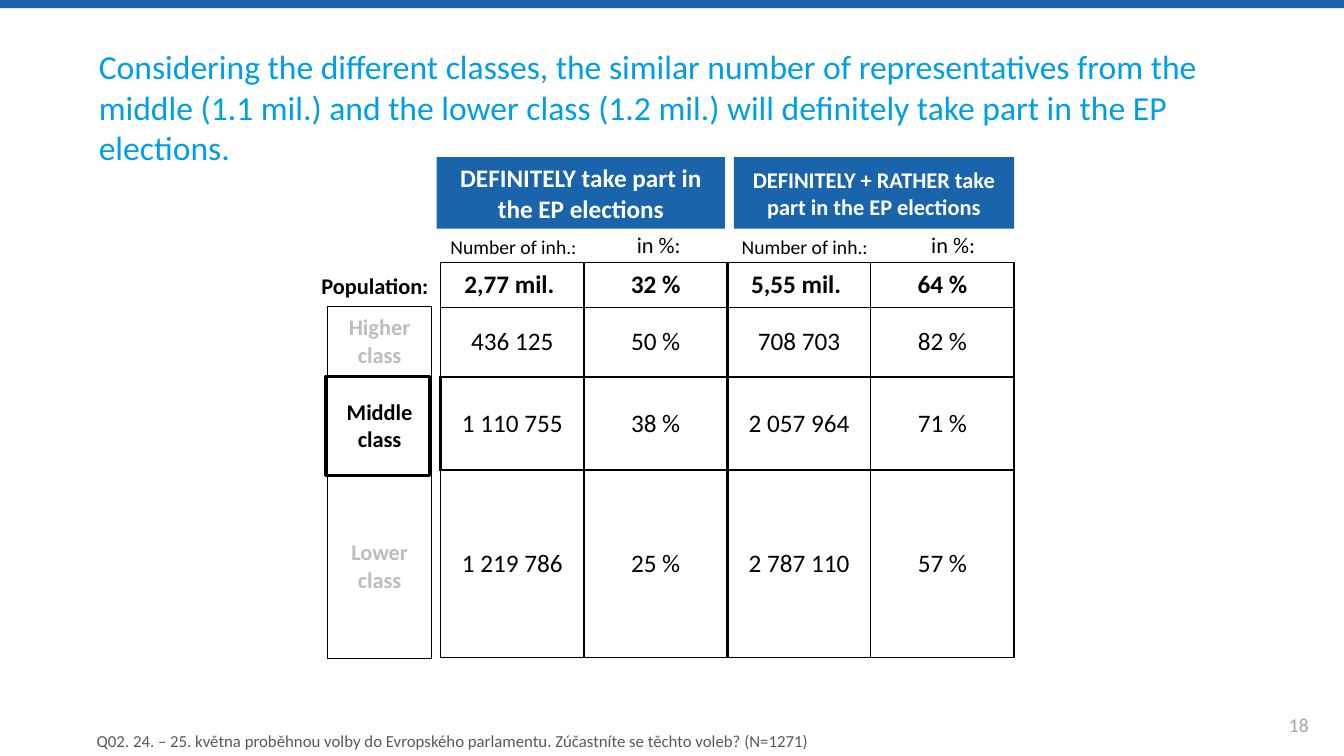
from lxml import etree
from pptx import Presentation, util as u
from pptx.dml.color import RGBColor
from pptx.enum import shapes, text
from pptx.oxml.ns import qn

BLUE = RGBColor(0x19, 0x64, 0xAA)
SKY = RGBColor(0x00, 0x9F, 0xE3)
WHITE = RGBColor(0xFF, 0xFF, 0xFF)
BLACK = RGBColor(0x00, 0x00, 0x00)
FOOTNOTE = RGBColor(0x59, 0x59, 0x59)
PAGE = RGBColor(0xA6, 0xA6, 0xA6)
MUTED = RGBColor(0xBD, 0xBD, 0xBD)

CENTER, LEFT = text.PP_ALIGN.CENTER, text.PP_ALIGN.LEFT
MIDDLE, TOP = text.MSO_ANCHOR.MIDDLE, text.MSO_ANCHOR.TOP


class Deck:
    """Draws on one slide; all lengths are percentages of its width or height."""
    font = "Calibri"

    def __init__(self):
        self.prs = Presentation()
        self.prs.slide_width, self.prs.slide_height = u.Inches(13.333), u.Inches(7.5)
        self.s = self.prs.slides.add_slide(self.prs.slide_layouts[5])

    def x(self, share):
        return round(self.prs.slide_width * share / 100)

    def y(self, share):
        return round(self.prs.slide_height * share / 100)

    def box(self, left, top, width, height):
        return self.x(left), self.y(top), self.x(width), self.y(height)

    def set_text(self, tf, words, size, color, bold=False, align=LEFT):
        tf.text = words
        p = tf.paragraphs[0]
        p.alignment = align
        p.font.name, p.font.size, p.font.bold = self.font, u.Pt(size), bold
        p.font.color.rgb = color

    def title(self, words, box, indent):
        sp = self.s.shapes.title
        sp.left, sp.top, sp.width, sp.height = self.box(*box)
        tf = sp.text_frame
        tf.auto_size, tf.vertical_anchor = text.MSO_AUTO_SIZE.NONE, TOP
        tf.margin_left = self.x(indent)
        tf.margin_top = tf.margin_right = tf.margin_bottom = 0
        self.set_text(tf, words, 24, SKY)

    def label(self, words, box, size, color=BLACK, bold=False, align=LEFT,
              anchor=TOP, wrap=True, inset=True):
        tf = self.s.shapes.add_textbox(*self.box(*box)).text_frame
        tf.word_wrap, tf.vertical_anchor = wrap, anchor
        if not inset:
            tf.margin_left = tf.margin_top = tf.margin_right = tf.margin_bottom = 0
        self.set_text(tf, words, size, color, bold, align)

    def rect(self, box, fill=None, line=None, words="", size=18):
        sp = self.s.shapes.add_shape(shapes.MSO_SHAPE.RECTANGLE, *self.box(*box))
        sp.shadow.inherit = False
        if fill is None:
            sp.fill.background()
        else:
            sp.fill.solid()
            sp.fill.fore_color.rgb = fill
        if line is None:
            sp.line.fill.background()
        else:
            sp.line.color.rgb, sp.line.width = BLACK, u.Pt(line)
        if words:
            sp.text_frame.word_wrap = True
            sp.text_frame.vertical_anchor = MIDDLE
            self.set_text(sp.text_frame, words, size, WHITE, True, CENTER)

    def table(self, left, top, col_width, heights, rows, style, border):
        """style(row) gives size, colour, bold; border(side, row, col) gives points."""
        cols = len(rows[0])
        frame = self.s.shapes.add_table(
            len(rows), cols, *self.box(left, top, col_width * cols, sum(heights)))
        tbl = frame.table
        tbl.first_row = tbl.horz_banding = False
        for col in tbl.columns:
            col.width = self.x(col_width)
        for i, values in enumerate(rows):
            tbl.rows[i].height = self.y(heights[i])
            for j, value in enumerate(values):
                cell = tbl.cell(i, j)
                cell.vertical_anchor = MIDDLE
                self.set_text(cell.text_frame, value, *style(i), CENTER)
                for side in "LRTB":
                    self.edge(cell, side, border(side, i, j))
                cell.fill.background()

    def edge(self, cell, side, points):
        tc_pr = cell._tc.get_or_add_tcPr()
        ln = etree.SubElement(tc_pr, qn("a:ln" + side), w=str(int(u.Pt(points))))
        fill = etree.SubElement(ln, qn("a:solidFill"))
        etree.SubElement(fill, qn("a:srgbClr"), val=str(BLACK))


def turnout_border(side, row, col):
    """Heavy lines halve the columns and frame the middle class row."""
    if side in "LR":
        line = col + (side == "R")
        heavy = line == 2 or (line == 0 and row == 2)
    else:
        heavy = row + (side == "B") in (2, 3)
    return 2.25 if heavy else 1


def main():
    d = Deck()
    d.rect((0, 0, 100, 1.07), BLUE)
    d.title("Considering the different classes, the similar number of representatives "
            "from the middle (1.1 mil.) and the lower class (1.2 mil.) will definitely "
            "take part in the EP elections.", (0, 6.13, 93.23, 9.47), 7.35)
    d.label("18", (93.3, 93.2, 6.68, 5.33), 14, PAGE, align=CENTER, anchor=MIDDLE)
    d.label("Q02. 24. – 25. května proběhnou volby do Evropského parlamentu. "
            "Zúčastníte se těchto voleb? (N=1271)",
            (7.2, 96, 75.45, 4), 12, FOOTNOTE, anchor=MIDDLE, inset=False)

    groups = [
        ("DEFINITELY take part in the EP elections", 18, 32.5, 21.45, 32.78, 46.65),
        ("DEFINITELY + RATHER take part in the EP elections", 16, 54.6, 20.85, 54.45, 68.55),
    ]
    for words, size, left, width, count_left, share_left in groups:
        d.rect((left, 20.8, width, 9.47), BLUE, words=words, size=size)
        d.label("Number of inh.:", (count_left, 30.4, 10.95, 4.53), 14, wrap=False)
        d.label("in %:", (share_left, 29.87, 4.8, 4.93), 16, wrap=False)

    d.label("Population:", (23.18, 35.33, 10.05, 4.93), 16, bold=True)
    d.table(24.37, 40.53, 7.75, [9.33, 13.07, 24.13],
            [["Higher class"], ["Middle class"], ["Lower class"]],
            lambda row: (16, BLACK if row == 1 else MUTED, True),
            lambda side, row, col: 1)
    d.rect((24.23, 49.73, 7.75, 13.2), line=2)
    d.table(32.78, 34.67, 10.67, [6, 9.2, 12.3, 24.8],
            [["2,77 mil. ", "32 %", "5,55 mil. ", "64 %"],
             ["436 125", "50 %", "708 703", "82 %"],
             ["1 110 755", "38 %", "2 057 964", "71 %"],
             ["1 219 786", "25 %", "2 787 110", "57 %"]],
            lambda row: (18, BLACK, row == 0), turnout_border)
    d.prs.save("out.pptx")


if __name__ == "__main__":
    main()
